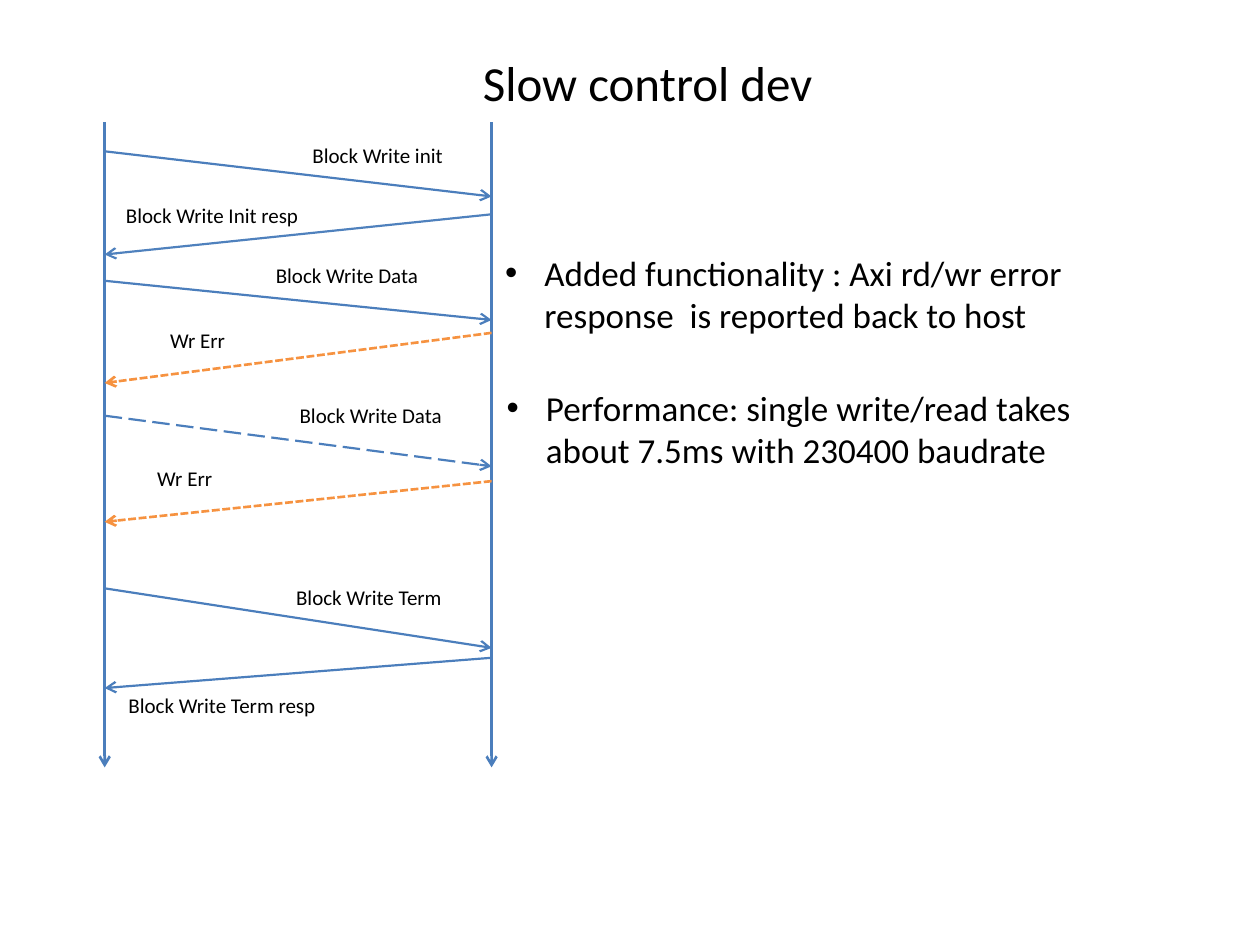
from dataclasses import dataclass

import pptx
import pptx.dml.color
import pptx.enum.dml
import pptx.enum.shapes
import pptx.enum.text
import pptx.oxml
import pptx.oxml.ns
import pptx.util

Cm = pptx.util.Cm
Dash = pptx.enum.dml.MSO_LINE
Align = pptx.enum.text.PP_ALIGN
Anchor = pptx.enum.text.MSO_ANCHOR
AutoSize = pptx.enum.text.MSO_AUTO_SIZE


@dataclass(frozen=True)
class Theme:
    font: str = "Calibri"
    text: str = "000000"
    request: str = "4B7EBC"
    response: str = "4F81BD"
    error: str = "F69240"
    title_size: int = 28
    body_size: int = 20
    label_size: int = 12
    thin: float = 1.25
    thick: float = 1.5


class SlideBuilder:
    def __init__(self, slide, theme):
        self.slide = slide
        self.theme = theme

    def format_text(self, shape, text, size, wrap, align=Align.LEFT):
        frame = shape.text_frame
        frame.text = text
        frame.word_wrap = wrap
        frame.auto_size = AutoSize.SHAPE_TO_FIT_TEXT
        frame.vertical_anchor = Anchor.TOP
        paragraph = frame.paragraphs[0]
        paragraph.alignment = align
        paragraph.space_before = pptx.util.Pt(0)
        paragraph.font.name = self.theme.font
        paragraph.font.size = pptx.util.Pt(size)
        paragraph.font.color.rgb = pptx.dml.color.RGBColor.from_string(self.theme.text)
        return paragraph

    def place(self, shape, left, top, width, height):
        shape.left, shape.top = Cm(left), Cm(top)
        shape.width, shape.height = Cm(width), Cm(height)

    def title(self, text, *box):
        shape = self.slide.shapes.title
        self.place(shape, *box)
        self.format_text(shape, text, self.theme.title_size, False, Align.CENTER)

    def bullet(self, index, text, *box):
        shape = self.slide.placeholders[index]
        self.place(shape, *box)
        paragraph = self.format_text(shape, text, self.theme.body_size, True)
        properties = paragraph._p.get_or_add_pPr()
        properties.set("marL", str(Cm(0.79)))
        properties.set("indent", str(-Cm(0.79)))

    def label(self, text, left, top, width):
        shape = self.slide.shapes.add_textbox(Cm(left), Cm(top), Cm(width), Cm(0.76))
        self.format_text(shape, text, self.theme.label_size, False)

    def arrow(self, start, end, color, width, dash=None):
        connector = self.slide.shapes.add_connector(
            pptx.enum.shapes.MSO_CONNECTOR.STRAIGHT, *map(Cm, start + end))
        line = connector.line
        line.color.rgb = pptx.dml.color.RGBColor.from_string(color)
        line.width = pptx.util.Pt(width)
        if dash is not None:
            line.dash_style = dash
        tail = pptx.oxml.ns.qn("a:tailEnd")
        line._get_or_add_ln().makeelement(tail)
        pptx.oxml.ns.qn("a:ln")
        head = pptx.oxml.parse_xml(
            f'<a:tailEnd {pptx.oxml.ns.nsdecls("a")} type="arrow"/>')
        line._get_or_add_ln().append(head)
        effects = pptx.oxml.parse_xml(f'<a:effectLst {pptx.oxml.ns.nsdecls("a")}/>')
        connector._element.spPr.append(effects)


def main():
    presentation = pptx.Presentation()
    presentation.slide_width, presentation.slide_height = Cm(25.4), Cm(19.05)
    slide = presentation.slides.add_slide(presentation.slide_layouts[3])
    theme = Theme()
    builder = SlideBuilder(slide, theme)

    host, device = 2.11, 9.91
    for x in (host, device):
        builder.arrow((x, 2.46), (x, 15.47), theme.request, theme.thick)

    request = (theme.request, theme.thin)
    response = (theme.response, theme.thin)
    repeat = (theme.request, theme.thin, Dash.LONG_DASH)
    error = (theme.error, theme.thick, Dash.SQUARE_DOT)
    exchanges = [
        (3.05, 3.96, request, "Block Write init", 6.05, 2.74, 3.18),
        (4.32, 5.13, response, "Block Write Init resp", 2.29, 3.96, 4.01),
        (5.66, 6.45, request, "Block Write Data", 5.31, 5.16, 3.4),
        (6.71, 7.72, error, "Wr Err", 3.18, 6.48, 1.63),
        (8.38, 9.4, repeat, "Block Write Data", 5.79, 8.0, 3.4),
        (9.7, 10.52, error, "Wr Err", 2.92, 9.27, 1.63),
        (11.86, 13.06, request, "Block Write Term", 5.72, 11.66, 3.58),
        (13.26, 13.87, request, "Block Write Term resp", 2.34, 13.84, 4.42),
    ]
    for number, (start, end, style, text, *box) in enumerate(exchanges):
        source, target = (host, device) if number % 2 == 0 else (device, host)
        builder.arrow((source, start), (target, end), *style)
        builder.label(text, *box)

    builder.title("Slow control dev", 9.45, 0.94, 7.21, 1.45)
    builder.bullet(1, "Added functionality : Axi rd/wr error response  is reported back to host",
                   9.93, 4.95, 13.36, 1.96)
    builder.bullet(2, "Performance: single write/read takes about 7.5ms with 230400 baudrate",
                   9.96, 7.67, 13.16, 1.96)
    presentation.save("out.pptx")


if __name__ == "__main__":
    main()
